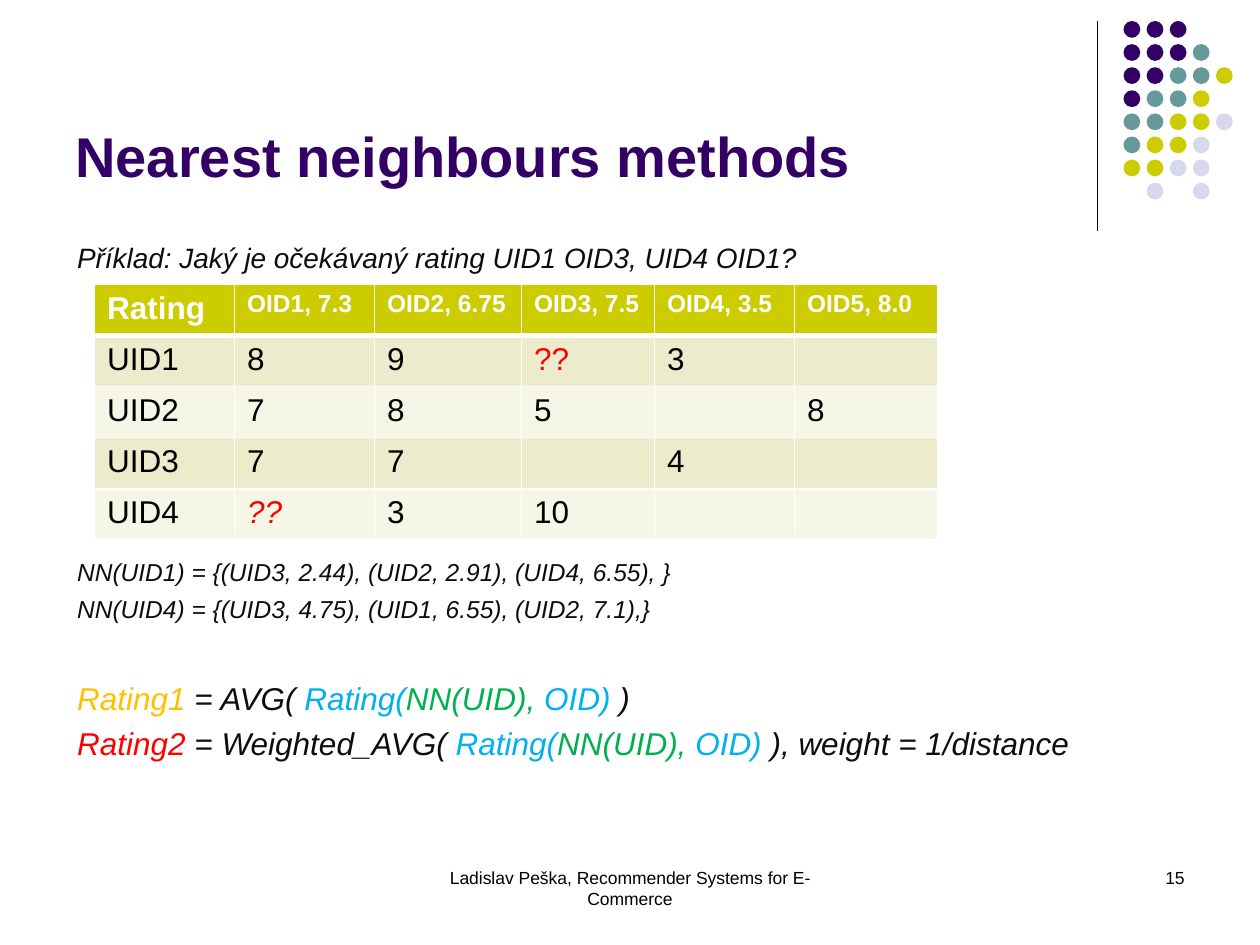
from dataclasses import dataclass

from lxml import etree
from pptx import Presentation
from pptx import util as u
from pptx.dml.color import RGBColor
from pptx.enum import shapes, text
from pptx.oxml import ns

FONT = "Arial"
BLACK = RGBColor(0x00, 0x00, 0x00)
WHITE = RGBColor(0xFF, 0xFF, 0xFF)
INK = RGBColor(0x0D, 0x0D, 0x0D)
PURPLE = RGBColor(0x33, 0x00, 0x66)
TEAL = RGBColor(0x66, 0x99, 0x99)
OLIVE = RGBColor(0xCC, 0xCC, 0x00)
LAVENDER = RGBColor(0xD8, 0xD8, 0xEC)
BAND_DARK = RGBColor(0xEC, 0xEC, 0xCC)
BAND_LIGHT = RGBColor(0xF6, 0xF6, 0xE7)
RED = RGBColor(0xFF, 0x00, 0x00)
AMBER = RGBColor(0xFF, 0xC0, 0x00)
BLUE = RGBColor(0x00, 0xB0, 0xF0)
GREEN = RGBColor(0x00, 0xB0, 0x50)


@dataclass(frozen=True)
class Run:
    text: str
    size: float
    color: RGBColor = INK
    bold: bool = False
    italic: bool = False


@dataclass(frozen=True)
class Para:
    runs: list[Run]
    before: float = 0
    align: text.PP_ALIGN = text.PP_ALIGN.LEFT


@dataclass(frozen=True)
class Box:
    left: float
    top: float
    width: float
    height: float
    paras: list[Para]
    anchor: text.MSO_ANCHOR = text.MSO_ANCHOR.TOP


def add_run(p, run: Run) -> None:
    r = p.add_run()
    r.text = run.text
    r.font.name = FONT
    r.font.size = u.Pt(run.size)
    r.font.bold = run.bold
    r.font.italic = run.italic
    r.font.color.rgb = run.color


def add_box(s, box: Box) -> None:
    sp = s.shapes.add_textbox(*map(u.Pt, (box.left, box.top, box.width, box.height)))
    tf = sp.text_frame
    tf.word_wrap = True
    tf.vertical_anchor = box.anchor
    for i, para in enumerate(box.paras):
        p = tf.add_paragraph() if i else tf.paragraphs[0]
        p.alignment = para.align
        p.space_before = u.Pt(para.before)
        for run in para.runs:
            add_run(p, run)


def add_dots(s, rows: list[str]) -> None:
    colors = {"P": PURPLE, "T": TEAL, "O": OLIVE, "L": LAVENDER}
    left, top, pitch, size = 642, 12, 13.2, 9.6
    group = s.shapes.add_group_shape()
    for i, row in enumerate(rows):
        for j, key in enumerate(row):
            if key not in colors:
                continue
            sp = group.shapes.add_shape(
                shapes.MSO_SHAPE.OVAL, u.Pt(left + j * pitch), u.Pt(top + i * pitch),
                u.Pt(size), u.Pt(size))
            sp.shadow.inherit = False
            sp.fill.solid()
            sp.fill.fore_color.rgb = colors[key]
            sp.line.fill.background()


def add_rule(s, x: float, top: float, bottom: float) -> None:
    sp = s.shapes.add_connector(
        shapes.MSO_CONNECTOR.STRAIGHT, u.Pt(x), u.Pt(top), u.Pt(x), u.Pt(bottom))
    sp.line.color.rgb = BLACK
    sp.line.width = u.Pt(0.75)
    etree.SubElement(sp._element.spPr, ns.qn("a:effectLst"))


def set_borders(cell, top: float, bottom: float) -> None:
    tc_pr = cell._tc.get_or_add_tcPr()
    widths = {"a:lnL": 1, "a:lnR": 1, "a:lnT": top, "a:lnB": bottom}
    for i, (tag, width) in enumerate(widths.items()):
        ln = etree.Element(ns.qn(tag), w=str(u.Pt(width)))
        fill = etree.SubElement(ln, ns.qn("a:solidFill"))
        etree.SubElement(fill, ns.qn("a:srgbClr"), val=str(WHITE))
        tc_pr.insert(i, ln)


def cell_run(value: str, row: int, col: int) -> Run:
    if row == 0:
        return Run(value, 14 if col else 18, WHITE, bold=True)
    unknown = value == "??"
    return Run(value, 18, RED if unknown else BLACK, italic=unknown and row == 4)


def add_ratings(s, left: float, top: float, widths: list[float], row_height: float,
                rows: list[list[str]]) -> None:
    table = s.shapes.add_table(
        len(rows), len(widths), u.Pt(left), u.Pt(top),
        u.Pt(sum(widths)), u.Pt(row_height * len(rows))).table
    for column, width in zip(table.columns, widths):
        column.width = u.Pt(width)
    for i, row in enumerate(rows):
        for j, value in enumerate(row):
            cell = table.cell(i, j)
            cell.fill.solid()
            cell.fill.fore_color.rgb = (
                OLIVE if i == 0 else BAND_DARK if i % 2 else BAND_LIGHT)
            set_borders(cell, top=3 if i == 1 else 1, bottom=3 if i == 0 else 1)
            if value:
                add_run(cell.text_frame.paragraphs[0], cell_run(value, i, j))


def formula(*parts: tuple[str, RGBColor]) -> list[Run]:
    return [Run(value, 18, color, italic=True) for value, color in parts]


def main() -> None:
    prs = Presentation()
    prs.slide_width, prs.slide_height = u.Pt(720), u.Pt(540)
    s = prs.slides.add_slide(prs.slide_layouts[6])

    # Corner decoration
    add_rule(s, 627, 12, 132)
    add_dots(s, ["PPP", "PPPT", "PPTTO", "PTTO", "TTOOL", "TOOL", "OOLL", " L L"])

    # Footer and page number
    add_box(s, Box(246, 492, 228, 36, [Para(
        [Run("Ladislav Peška, Recommender Systems for E-Commerce", 10, BLACK)],
        align=text.PP_ALIGN.CENTER)]))
    add_box(s, Box(516, 492, 168, 36, [Para(
        [Run("15", 10, BLACK)], align=text.PP_ALIGN.RIGHT)]))

    # Title
    add_box(s, Box(36, 9.5, 594, 102, [Para(
        [Run("Nearest neighbours methods", 32, PURPLE, bold=True)])],
        text.MSO_ANCHOR.BOTTOM))

    # Question, neighbours and formulas; the first gap leaves room for the table
    neighbour_rating = [("Rating(", BLUE), ("NN(UID), ", GREEN), ("OID) ", BLUE)]
    add_box(s, Box(37, 134, 648, 347, [
        Para([Run("Příklad: Jaký je očekávaný rating UID1 OID3, UID4 OID1?",
                  16, italic=True)]),
        Para([Run("NN(UID1) = {(UID3, 2.44), (UID2, 2.91), (UID4, 6.55), }",
                  14, italic=True)], before=161.5),
        Para([Run("NN(UID4) = {(UID3, 4.75), (UID1, 6.55), (UID2, 7.1),}",
                  14, italic=True)], before=4.2),
        Para(formula(("Rating1", AMBER), (" = AVG( ", INK), *neighbour_rating,
                     (")", INK)), before=32),
        Para(formula(("Rating2 ", RED), ("= Weighted_AVG( ", INK), *neighbour_rating,
                     ("), weight = 1/distance", INK)), before=4.2),
    ]))

    # Ratings table
    add_ratings(s, 54, 162.5, [80, 80, 84, 76, 80, 82], 29.2, [
        ["Rating", "OID1, 7.3", "OID2, 6.75", "OID3, 7.5", "OID4, 3.5", "OID5, 8.0"],
        ["UID1", "8", "9", "??", "3", ""],
        ["UID2", "7", "8", "5", "", "8"],
        ["UID3", "7", "7", "", "4", ""],
        ["UID4", "??", "3", "10", "", ""],
    ])

    prs.save("out.pptx")


if __name__ == "__main__":
    main()
